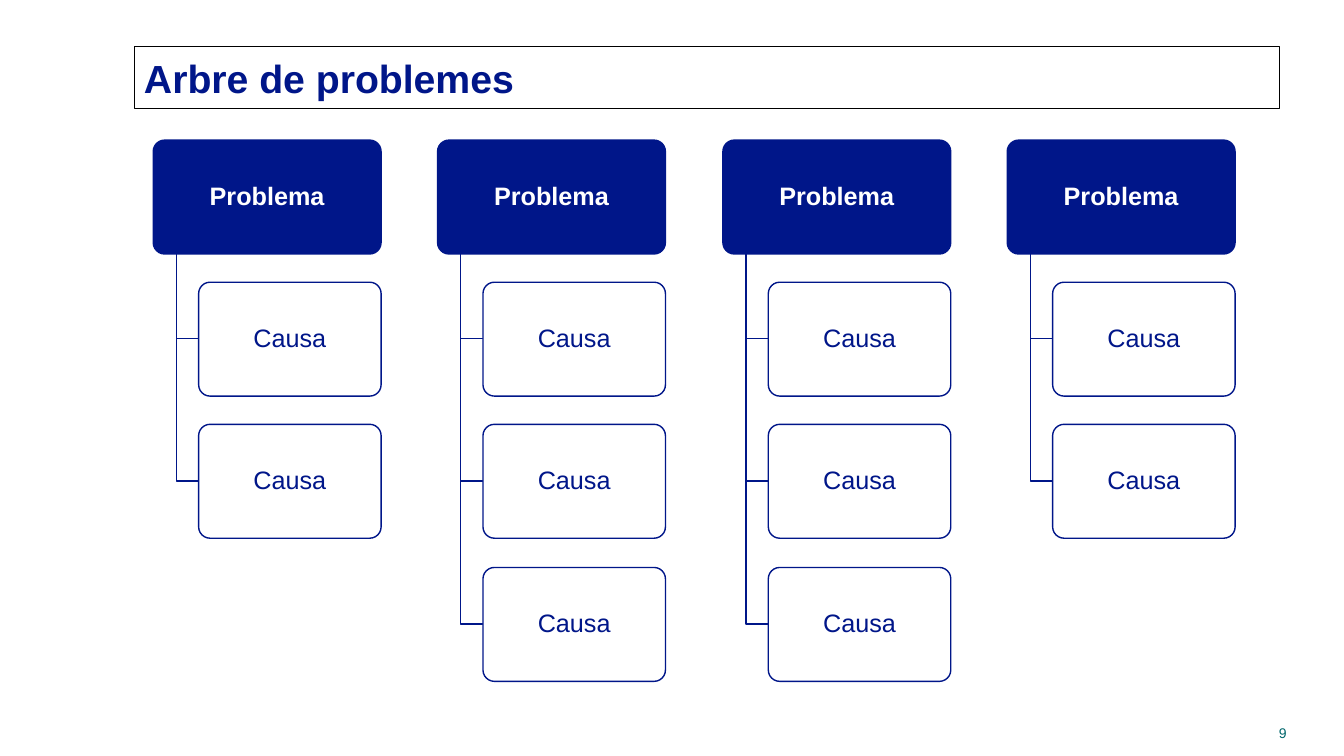
from pptx import Presentation
from pptx.dml.color import RGBColor as RGB
from pptx.enum.shapes import MSO_SHAPE as SHAPE
from pptx.enum.text import MSO_ANCHOR as ANCHOR, PP_ALIGN as ALIGN
from pptx.util import Pt

PX = 9144
HEX = {"navy": "001689", "white": "FFFFFF", "black": "000000", "teal": "00676C"}


def write(box, text, size, color, bold, align, anchor):
    frame = box.text_frame
    frame.word_wrap = True
    frame.vertical_anchor = anchor
    para = frame.paragraphs[0]
    para.alignment = align
    run = para.add_run()
    run.text = text
    font = run.font
    font.name, font.size, font.bold = "Arial", Pt(size), bold
    font.color.rgb = RGB.from_string(HEX[color])
    return para


def card(left, top, width, text, fill, ink, bold):
    box = shapes.add_shape(SHAPE.ROUNDED_RECTANGLE, left * PX, top * PX, width * PX, high * PX)
    box.adjustments[0] = 0.1
    box.shadow.inherit = False
    box.fill.solid()
    box.fill.fore_color.rgb = RGB.from_string(HEX[fill])
    box.line.color.rgb = RGB.from_string(HEX["navy"])
    box.line.width = Pt(1)
    frame = box.text_frame
    frame.margin_left = frame.margin_right = 7 * PX
    frame.margin_top = frame.margin_bottom = 6 * PX
    write(box, text, 18, ink, bold, ALIGN.CENTER, ANCHOR.MIDDLE).line_spacing = 0.9


deck = Presentation()
deck.slide_width, deck.slide_height = 1333 * PX, 750 * PX
shapes = deck.slides.add_slide(deck.slide_layouts[6]).shapes

page = shapes.add_textbox(1202 * PX, 714 * PX, 84 * PX, 29 * PX)
write(page, "9", 10, "teal", False, ALIGN.RIGHT, ANCHOR.TOP)

title = shapes.add_shape(SHAPE.RECTANGLE, 133 * PX, 46 * PX, 1136 * PX, 62 * PX)
title.shadow.inherit = False
title.fill.background()
title.line.color.rgb = RGB.from_string(HEX["black"])
title.line.width = Pt(0.75)
write(title, "Arbre de problemes", 28, "navy", True, ALIGN.LEFT, ANCHOR.MIDDLE)

high, first = 113, 139
for col, count in enumerate([2, 3, 3, 2]):
    left = 152 + round(col * 282.4)
    trunk, inner = left + 23, left + 45
    card(left, first, 226, "Problema", "navy", "white", True)
    for row in range(1, count + 1):
        top = first + round(row * 141.25)
        mid = top + high // 2
        path = shapes.build_freeform(trunk, first + high, scale=PX)
        path.add_line_segments([(trunk, mid), (inner, mid)], close=False)
        limb = path.convert_to_shape()
        limb.shadow.inherit = False
        limb.fill.background()
        limb.line.color.rgb = RGB.from_string(HEX["navy"])
        limb.line.width = Pt(1)
        card(inner, top, 181, "Causa", "white", "navy", False)

deck.save("out.pptx")
